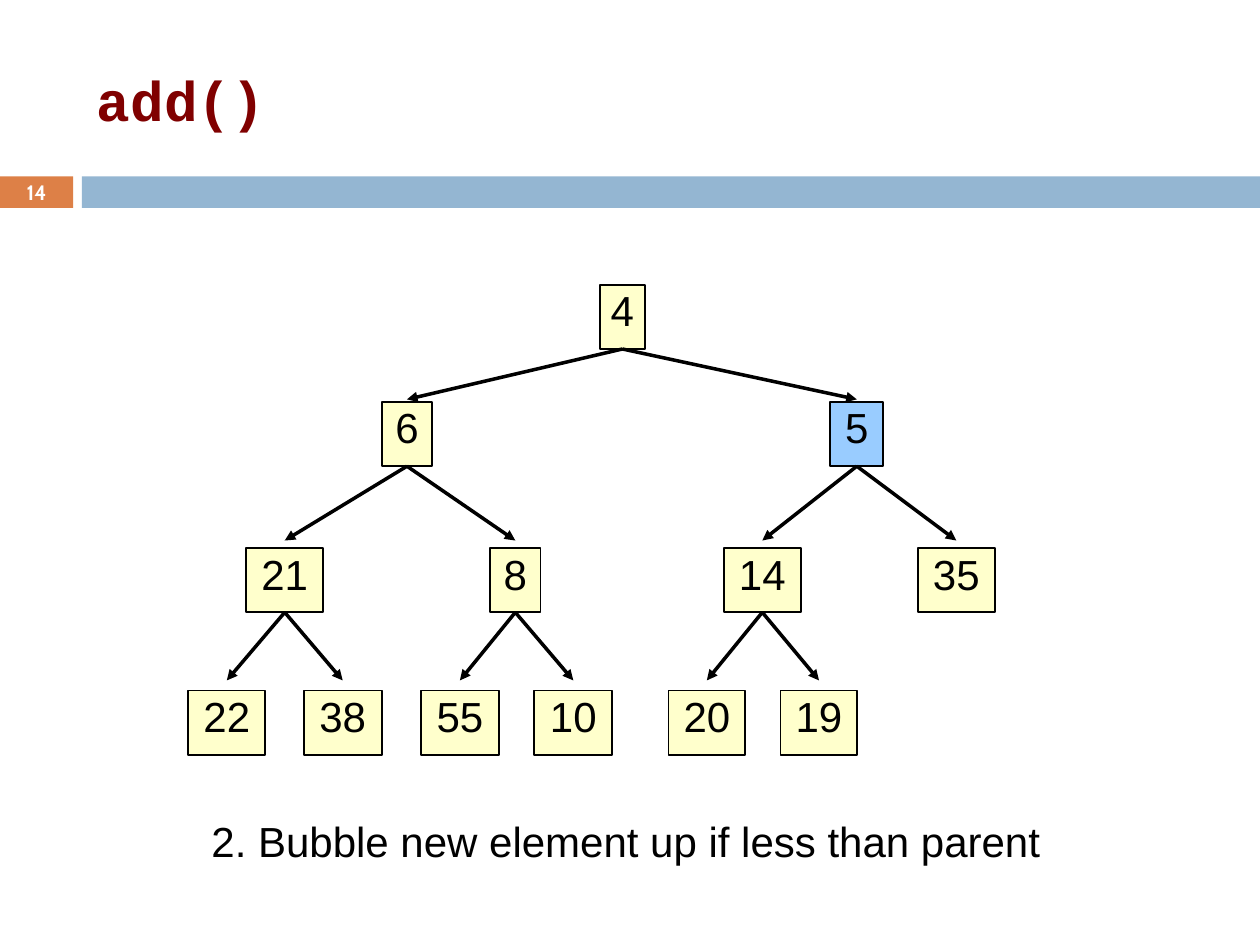
from lxml import etree
from pptx import Presentation
from pptx.dml.color import RGBColor
from pptx.enum import shapes, text
from pptx.oxml import ns
from pptx.util import Inches, Pt

LEVELS = [
    (0, 0, [("4", 3.44, 0.36)]),
    (0.93, 0.02, [("6", 1.73, 0.4), ("5", 5.3, 0.42)]),
    (2.09, 0.06, [("21", 0.76, 0.61), ("8", 2.59, 0.4),
                  ("14", 4.55, 0.61), ("35", 6.09, 0.61)]),
    (3.22, 0.08, [("22", 0.3, 0.61), ("38", 1.22, 0.62), ("55", 2.15, 0.62),
                  ("10", 3.05, 0.62), ("20", 4.11, 0.61), ("19", 5, 0.61)]),
]
NODE_HEIGHT = 0.51
BUBBLED = "5"


def color(value):
    return RGBColor.from_string(value)


def write(frame, words, size, font, ink, bold=False, align=None):
    frame.text = words
    paragraph = frame.paragraphs[0]
    paragraph.alignment = align
    run = paragraph.runs[0]
    run.font.size = Pt(size)
    run.font.name = font
    run.font.bold = bold
    run.font.color.rgb = color(ink)
    return paragraph


def add_label(slide, box, words, size, font, ink, bold=False, align=None,
              anchor=text.MSO_ANCHOR.MIDDLE, wrap=True):
    frame = slide.shapes.add_textbox(*map(Inches, box)).text_frame
    frame.word_wrap = wrap
    frame.vertical_anchor = anchor
    write(frame, words, size, font, ink, bold, align)
    return frame


def add_rectangle(slide, box, fill, outline=None):
    rectangle = slide.shapes.add_shape(
        shapes.MSO_SHAPE.RECTANGLE, *map(Inches, box))
    rectangle.shadow.inherit = False
    rectangle.fill.solid()
    rectangle.fill.fore_color.rgb = color(fill)
    if outline:
        rectangle.line.color.rgb = color(outline)
        rectangle.line.width = Pt(1)
    else:
        rectangle.line.fill.background()
    return rectangle


def add_node(slide, box, value):
    fill = "99CCFF" if value == BUBBLED else "FFFFCC"
    node = add_rectangle(slide, box, fill, "000000")
    frame = node.text_frame
    frame.margin_left = frame.margin_top = frame.margin_bottom = 0
    frame.margin_right = Inches(0.04)
    frame.vertical_anchor = text.MSO_ANCHOR.TOP
    paragraph = write(frame, value, 24, "Arial", "000000",
                      align=text.PP_ALIGN.CENTER)
    paragraph.space_before = Pt(14)
    paragraph._p.get_or_add_pPr().set("marL", str(Inches(0.04)))
    return node


def add_branch(slide, parent, child, gap):
    branch = slide.shapes.add_connector(
        shapes.MSO_CONNECTOR.STRAIGHT, 0, 0,
        child.left + child.width // 2, child.top - Inches(gap))
    branch.begin_connect(parent, 2)
    branch.line.color.rgb = color("000000")
    branch.line.width = Pt(2)
    etree.SubElement(branch.line._get_or_add_ln(), ns.qn("a:tailEnd"),
                     type="triangle")
    etree.SubElement(branch._element.spPr, ns.qn("a:effectLst"))


def add_header(slide, box):
    left, top, width, height = box
    band_top = top + height - 0.25
    add_rectangle(slide, (left, band_top, 0.58, 0.25), "DD8047")
    add_rectangle(slide, (left + 0.65, band_top, width - 0.65, 0.25), "94B6D2")
    number = add_label(slide, (left, band_top - 0.01, 0.58, 0.27), "14", 11.9,
                       "Cabin", "FFFFFF", True, text.PP_ALIGN.CENTER)
    number.margin_top = number.margin_bottom = 0
    add_label(slide, (left + 0.67, top + 0.25, 8.92, 1.08), "add()", 32,
              "Courier New", "800000", True)


def add_heap(slide, box):
    left, top = box[:2]
    parents = []
    for drop, gap, entries in LEVELS:
        nodes = [
            add_node(slide, (left + center - width / 2, top + drop,
                             width, NODE_HEIGHT), value)
            for value, center, width in entries]
        if parents:
            for index, node in enumerate(nodes):
                add_branch(slide, parents[index // 2], node, gap)
        parents = nodes


def add_step(slide, box):
    add_label(slide, box, "2. Bubble new element up if less than parent", 24,
              "Arial", "000000", anchor=text.MSO_ANCHOR.TOP, wrap=False)


def main():
    deck = Presentation()
    deck.slide_width = Inches(10)
    deck.slide_height = Inches(7.5)
    slide = deck.slides.add_slide(deck.slide_layouts[6])
    add_header(slide, (0, 0, 10, 1.65))
    add_heap(slide, (1.5, 2.26, 6.4, 3.73))
    add_step(slide, (1.58, 6.42, 6.85, 0.5))
    deck.save("out.pptx")


if __name__ == "__main__":
    main()
